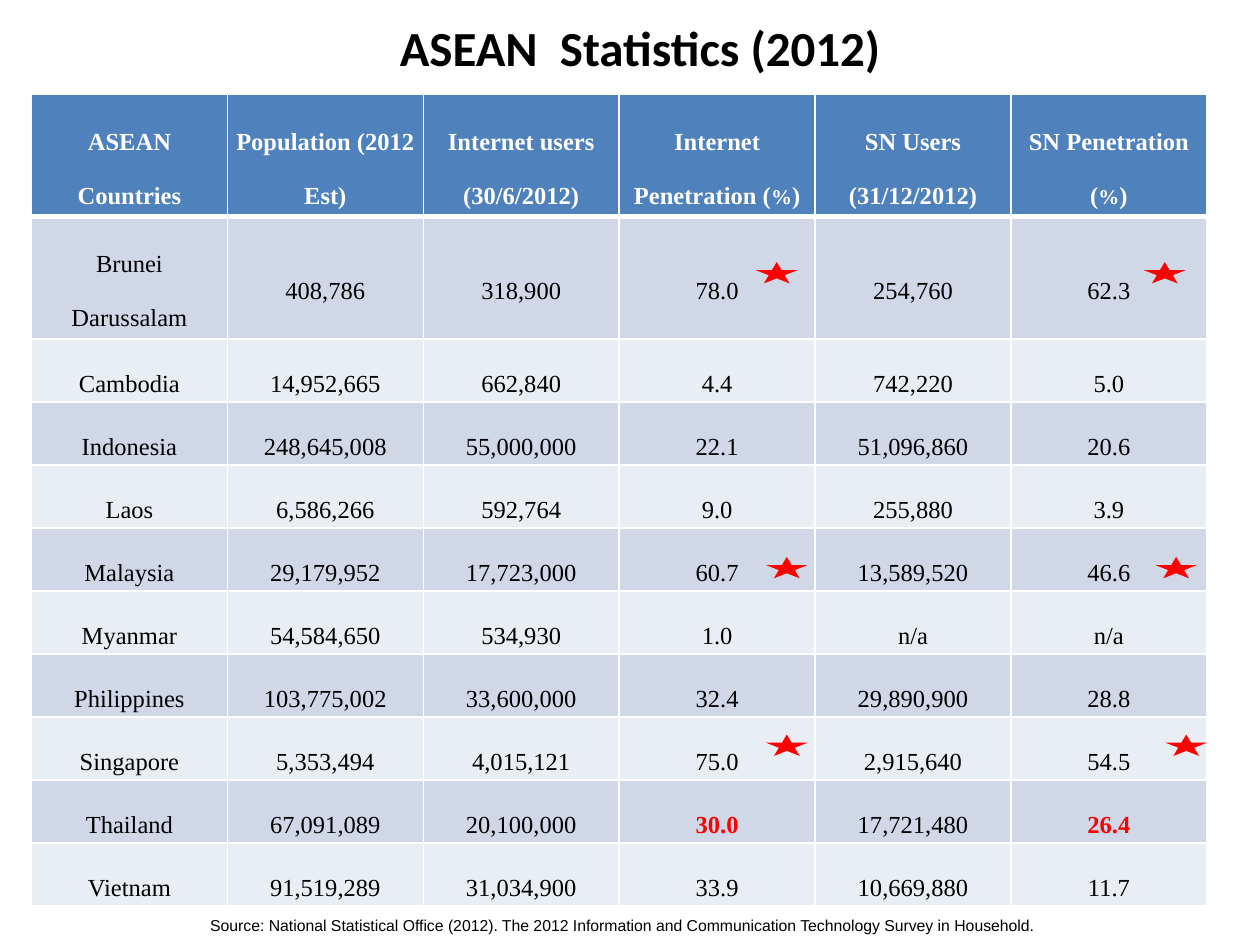
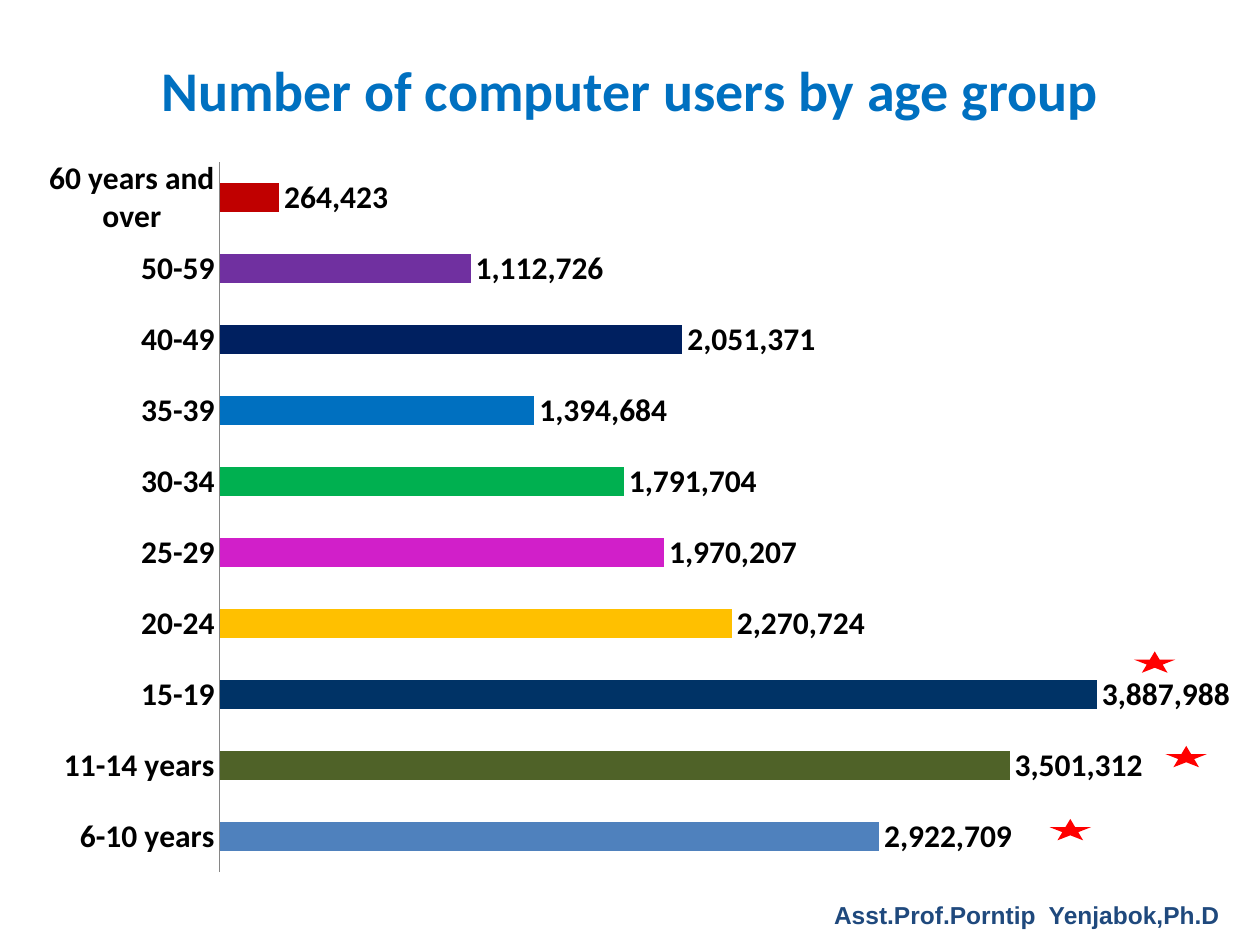
from lxml import etree
from pptx import Presentation
from pptx import util as u
from pptx.chart.data import CategoryChartData
from pptx.dml.color import RGBColor
from pptx.enum import chart as ch
from pptx.enum import shapes, text
from pptx.oxml import parse_xml
from pptx.oxml.ns import nsdecls, qn

# Content: statistics table
STATS_TITLE = "ASEAN  Statistics (2012)"
HEADERS = ["ASEAN Countries", "Population (2012 Est)", "Internet users (30/6/2012)",
           "Internet Penetration (%)", "SN Users (31/12/2012)", "SN Penetration (%)"]
COUNTRIES = [
    ("Brunei Darussalam", "408,786", "318,900", "78.0", "254,760", "62.3"),
    ("Cambodia", "14,952,665", "662,840", "4.4", "742,220", "5.0"),
    ("Indonesia", "248,645,008", "55,000,000", "22.1", "51,096,860", "20.6"),
    ("Laos", "6,586,266", "592,764", "9.0", "255,880", "3.9"),
    ("Malaysia", "29,179,952", "17,723,000", "60.7", "13,589,520", "46.6"),
    ("Myanmar", "54,584,650", "534,930", "1.0", "n/a", "n/a"),
    ("Philippines", "103,775,002", "33,600,000", "32.4", "29,890,900", "28.8"),
    ("Singapore", "5,353,494", "4,015,121", "75.0", "2,915,640", "54.5"),
    ("Thailand", "67,091,089", "20,100,000", "30.0", "17,721,480", "26.4"),
    ("Vietnam", "91,519,289", "31,034,900", "33.9", "10,669,880", "11.7"),
]
HIGHLIGHTS = {("Thailand", 3), ("Thailand", 5)}
SOURCE = ("Source: National Statistical Office (2012). The 2012 Information and "
          "Communication Technology Survey in Household.")
STATS_STARS = [(6, 2.08), (6.08, 4.42), (6.08, 5.83),
               (9.08, 2.08), (9.17, 4.42), (9.25, 5.83)]

# Content: age group chart, from the bottom bar up
AGE_TITLE = "Number of computer users by age group"
AGE_GROUPS = [
    ("6-10 years", 2922709, "4F81BD"),
    ("11-14 years", 3501312, "4F6228"),
    ("15-19", 3887988, "003366"),
    ("20-24", 2270724, "FFC000"),
    ("25-29", 1970207, "D11FC9"),
    ("30-34", 1791704, "00B050"),
    ("35-39", 1394684, "0070C0"),
    ("40-49", 2051371, "002060"),
    ("50-59", 1112726, "7030A0"),
    ("60 years and over", 264423, "C00000"),
]
AUTHOR = "Asst.Prof.Porntip  Yenjabok,Ph.D"
AGE_STARS = [(9, 5.17), (9.25, 5.92), (8.33, 6.5)]

# Shared style
BLACK, WHITE, RED, NAVY, BLUE = "000000", "FFFFFF", "FF0000", "1F497D", "0070C0"
HEADER_FILL, BANDS = "4F81BD", ("D0D8E8", "E9EDF4")
ALIGN = text.PP_ALIGN
MIDDLE = text.MSO_ANCHOR.MIDDLE


def rgb(value):
    return RGBColor.from_string(value)


def box(*lengths):
    return [u.Inches(n) for n in lengths]


def style(font, color, **formats):
    for name, value in formats.items():
        setattr(font, name, value)
    font.color.rgb = rgb(color)


def add_text(slide, words, at, color, align, anchor=MIDDLE, **formats):
    tf = slide.shapes.add_textbox(*box(*at)).text_frame
    tf.word_wrap, tf.vertical_anchor = True, anchor
    p = tf.paragraphs[0]
    p.alignment = align
    r = p.add_run()
    r.text = words
    style(r.font, color, **formats)


def add_title(slide, words, at, color, size):
    add_text(slide, words, at, color, ALIGN.CENTER,
             name="Calibri", size=u.Pt(size), bold=True)


def add_stars(slide, places):
    for x, y in places:
        sp = slide.shapes.add_shape(shapes.MSO_SHAPE.STAR_5_POINT, *box(x, y, 0.33, 0.17))
        sp.shadow.inherit = False
        sp.fill.solid()
        sp.fill.fore_color.rgb = rgb(RED)
        sp.line.fill.background()


def add_borders(cell, widths):
    tc_pr = cell._tc.get_or_add_tcPr()
    for i, (side, points) in enumerate(widths.items()):
        ln = parse_xml(f'<a:ln{side} {nsdecls("a")} w="{u.Pt(points)}"><a:solidFill>'
                       f'<a:srgbClr val="{WHITE}"/></a:solidFill></a:ln{side}>')
        tc_pr.insert(i, ln)


def fill_cell(cell, words, fill, color, bold, widths):
    cell.fill.solid()
    cell.fill.fore_color.rgb = rgb(fill)
    cell.vertical_anchor = MIDDLE
    cell.margin_left = cell.margin_right = u.Inches(0.07)
    cell.margin_top = cell.margin_bottom = 0
    p = cell.text_frame.paragraphs[0]
    p.alignment, p.line_spacing = ALIGN.CENTER, 2.0
    # A percent sign is set slightly smaller than the words around it
    for part in filter(None, words.replace("%", "|%|").split("|")):
        r = p.add_run()
        r.text = part
        style(r.font, color, name="Times New Roman", bold=bold,
              size=u.Pt(12 if part == "%" else 14))
    add_borders(cell, widths)


def build_stats(slide):
    add_title(slide, STATS_TITLE, (0.58, -0.25, 9, 1.25), BLACK, 28)

    # Table
    rows = [HEADERS, *COUNTRIES]
    table = slide.shapes.add_table(len(rows), len(HEADERS),
                                   *box(0.25, 0.75, 9.33, 6.43)).table
    for i, words in enumerate(rows):
        table.rows[i].height = u.Inches(0.97 if i < 2 else 0.5)
        header = i == 0
        fill = HEADER_FILL if header else BANDS[(i - 1) % 2]
        widths = {"L": 1, "R": 1, "T": 3 if i == 1 else 1, "B": 3 if header else 1}
        for j, word in enumerate(words):
            marked = (words[0], j) in HIGHLIGHTS
            color = WHITE if header else RED if marked else BLACK
            fill_cell(table.cell(i, j), word, fill, color, header or marked, widths)

    add_text(slide, SOURCE, (1.57, 7.22, 7.2, 0.25), BLACK, ALIGN.LEFT,
             name="Arial", size=u.Pt(9))
    add_stars(slide, STATS_STARS)


def place_plot(chart, **fractions):
    layout = parse_xml(f'<c:layout {nsdecls("c")}><c:manualLayout/></c:layout>')
    values = {"layoutTarget": "inner", "xMode": "edge", "yMode": "edge", **fractions}
    for tag, value in values.items():
        etree.SubElement(layout[0], qn(f"c:{tag}")).set("val", str(value))
    plot_area = chart._chartSpace.chart.plotArea
    for old in plot_area.findall(qn("c:layout")):
        plot_area.remove(old)
    plot_area.insert(0, layout)


def build_ages(slide):
    add_title(slide, AGE_TITLE, (0, 0.08, 10, 1.25), BLUE, 32)

    # Chart
    names, users, colors = zip(*AGE_GROUPS)
    data = CategoryChartData(number_format="#,##0")
    data.categories = names
    data.add_series("Series 1", users)
    chart = slide.shapes.add_chart(ch.XL_CHART_TYPE.BAR_CLUSTERED,
                                   *box(0.17, 1.17, 9.83, 5.87), data).chart
    chart.has_legend = chart.has_title = False
    style(chart.font, BLACK, name="Calibri", size=u.Pt(10))
    place_plot(chart, x=0.16, y=0.02, w=0.82, h=0.96)

    # Axes
    ages, counts = chart.category_axis, chart.value_axis
    ages.major_tick_mark = ages.minor_tick_mark = ch.XL_TICK_MARK.NONE
    ages.format.line.color.rgb = rgb("868686")
    ages.format.line.width = u.Pt(0.75)
    counts.visible = counts.has_major_gridlines = False
    counts.minimum_scale, counts.maximum_scale = 0, 4500000

    # Bars and labels
    plot = chart.plots[0]
    plot.vary_by_categories = False
    plot.gap_width, plot.overlap = 150, -25
    for i, color in enumerate(colors):
        bar = plot.series[0].points[i].format.fill
        bar.solid()
        bar.fore_color.rgb = rgb(color)
    plot.has_data_labels = True
    labels = plot.data_labels
    labels.show_value = True
    labels.number_format, labels.number_format_is_linked = "#,##0", False
    labels.position = ch.XL_LABEL_POSITION.OUTSIDE_END
    for font in (ages.tick_labels.font, labels.font):
        style(font, BLACK, name="Calibri", size=u.Pt(18), bold=True)

    add_text(slide, AUTHOR, (6, 7.09, 3.78, 0.4), NAVY, ALIGN.RIGHT,
             text.MSO_ANCHOR.TOP, name="Arial", size=u.Pt(14), bold=True)
    add_stars(slide, AGE_STARS)


def main():
    prs = Presentation()
    prs.slide_width, prs.slide_height = box(10, 7.5)
    for build in (build_stats, build_ages):
        build(prs.slides.add_slide(prs.slide_layouts[6]))
    prs.save("out.pptx")


if __name__ == "__main__":
    main()
